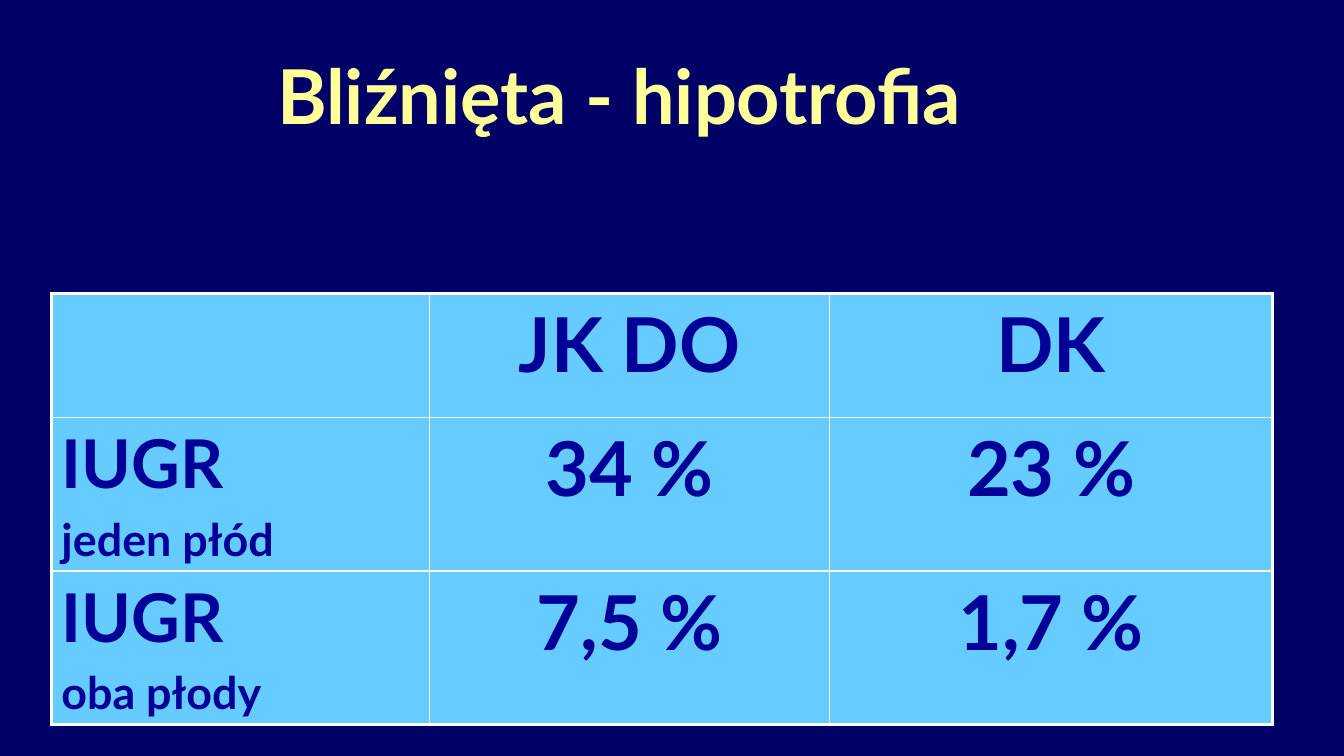
from lxml import etree
from pptx import Presentation
from pptx import util as u
from pptx.dml.color import RGBColor
from pptx.enum import text
from pptx.oxml import ns

COLOURS = {
    "background": "000066",
    "title": "FFFF99",
    "cell": "66CCFF",
    "cell text": "000099",
    "border": "FFFFFF",
}
FONT = "Lato"
OUTER_LINE, INNER_LINE = 2.25, 1

COLUMN_WIDTHS = [3.75, 3.97, 4.39]
ROW_HEIGHTS = [1.23, 1.43, 1.43]
# Each cell is a list of (line, size) pairs
ROWS = [
    [[], [("JK DO", 54)], [("DK", 54)]],
    [[("IUGR", 48), ("jeden płód", 32)], [("34 %", 54)], [("23 %", 54)]],
    [[("IUGR", 48), ("oba płody", 32)], [("7,5 %", 54)], [("1,7 %", 54)]],
]


def colour(name):
    return RGBColor.from_string(COLOURS[name])


def write(paragraph, words, *, size, color, align=text.PP_ALIGN.LEFT, before=0):
    paragraph.alignment = align
    paragraph.space_before = u.Pt(before)
    run = paragraph.add_run()
    run.text = words
    run.font.name = FONT
    run.font.size = u.Pt(size)
    run.font.bold = True
    run.font.color.rgb = colour(color)


def add_title(slide, words):
    box = slide.shapes.add_textbox(
        u.Inches(2.65), u.Inches(0.33), u.Inches(8.74), u.Inches(1.21))
    frame = box.text_frame
    frame.word_wrap = True
    frame.vertical_anchor = text.MSO_ANCHOR.MIDDLE
    write(frame.paragraphs[0], words, size=54, color="title")


def set_borders(cell, widths):
    """Draw the borders of a cell; they must precede its fill in the XML."""
    properties = cell._tc.get_or_add_tcPr()
    for position, (side, width) in enumerate(widths.items()):
        line = etree.Element(ns.qn(f"a:ln{side}"), w=str(u.Pt(width)))
        fill = etree.SubElement(line, ns.qn("a:solidFill"))
        etree.SubElement(fill, ns.qn("a:srgbClr"), val=COLOURS["border"])
        properties.insert(position, line)


def fill_cell(cell, lines, align):
    cell.fill.solid()
    cell.fill.fore_color.rgb = colour("cell")
    frame = cell.text_frame
    for index, (words, size) in enumerate(lines):
        paragraph = frame.add_paragraph() if index else frame.paragraphs[0]
        write(paragraph, words, size=size, color="cell text", align=align,
              before=0.2 * size if index else 0)


def add_growth_table(slide):
    frame = slide.shapes.add_table(
        len(ROWS), len(COLUMN_WIDTHS), u.Inches(0.51), u.Inches(2.91),
        u.Inches(sum(COLUMN_WIDTHS)), u.Inches(sum(ROW_HEIGHTS)))
    table = frame.table
    table.first_row = table.horz_banding = False
    for column, width in zip(table.columns, COLUMN_WIDTHS):
        column.width = u.Inches(width)
    for row, height in zip(table.rows, ROW_HEIGHTS):
        row.height = u.Inches(height)

    last_row, last_column = len(ROWS) - 1, len(COLUMN_WIDTHS) - 1
    for r, row in enumerate(ROWS):
        for c, lines in enumerate(row):
            cell = table.cell(r, c)
            align = text.PP_ALIGN.CENTER if c else text.PP_ALIGN.LEFT
            fill_cell(cell, lines, align)
            outer = {"L": c == 0, "R": c == last_column,
                     "T": r == 0, "B": r == last_row}
            set_borders(cell, {side: OUTER_LINE if edge else INNER_LINE
                               for side, edge in outer.items()})


def main():
    presentation = Presentation()
    presentation.slide_width = u.Inches(13.33)
    presentation.slide_height = u.Inches(7.5)
    slide = presentation.slides.add_slide(presentation.slide_layouts[6])

    # Background
    slide.background.fill.solid()
    slide.background.fill.fore_color.rgb = colour("background")

    # Content
    add_growth_table(slide)
    add_title(slide, "Bliźnięta - hipotrofia")

    presentation.save("out.pptx")


if __name__ == "__main__":
    main()
